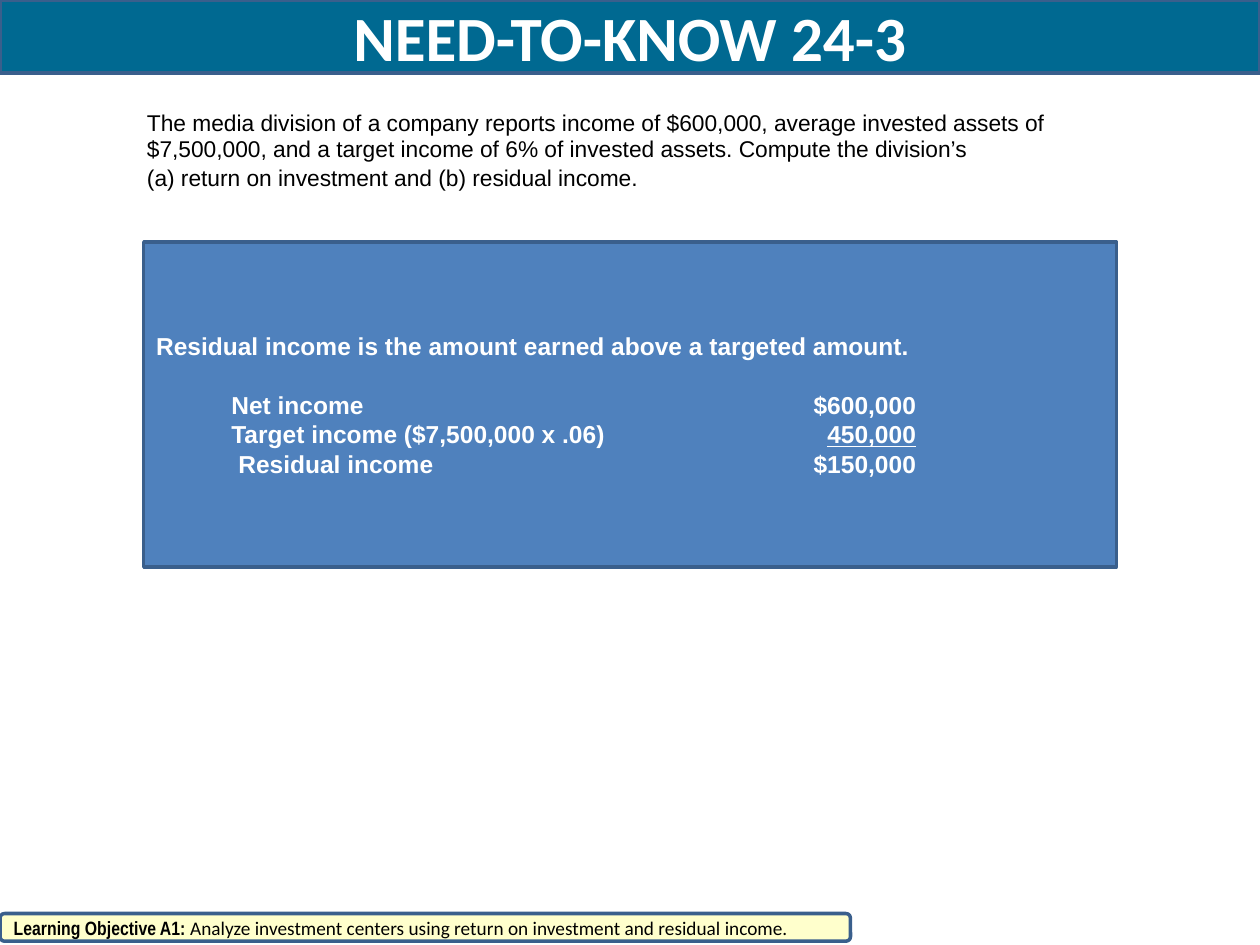
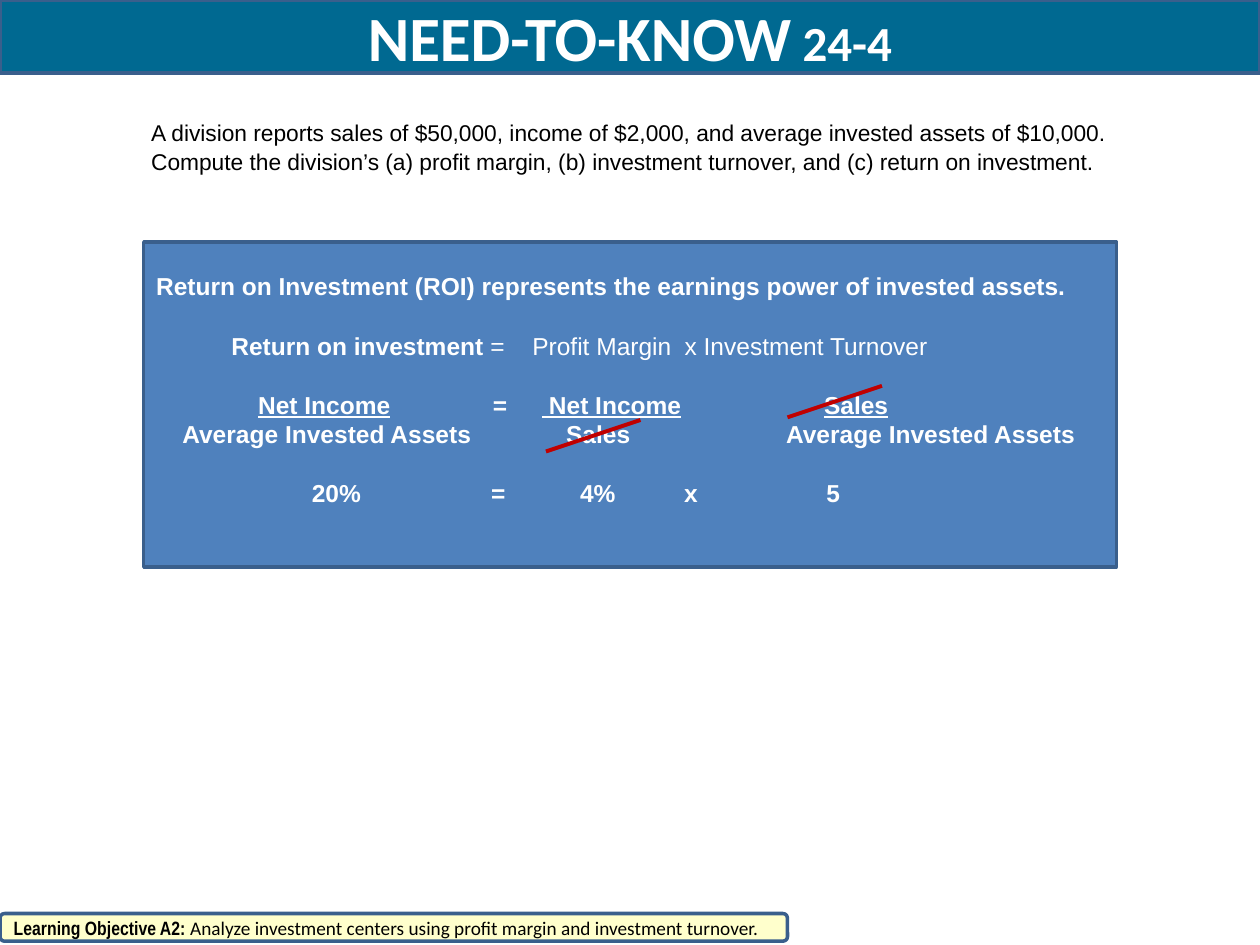
import dataclasses
import typing

import pptx
import pptx.dml.color
import pptx.enum.shapes
import pptx.enum.text
import pptx.oxml
import pptx.oxml.ns
import pptx.util

Pt = pptx.util.Pt
Shape = pptx.enum.shapes.MSO_SHAPE
Align = pptx.enum.text.PP_ALIGN
Anchor = pptx.enum.text.MSO_ANCHOR
Fit = pptx.enum.text.MSO_AUTO_SIZE


@dataclasses.dataclass(frozen=True)
class Theme:
    band: str = "006991"
    panel: str = "4F81BD"
    edge: str = "3A5F8C"
    cream: str = "FFFFCC"
    strike: str = "C00000"
    white: str = "FFFFFF"
    black: str = "000000"
    body: str = "Arial"
    head: str = "Calibri"
    narrow: str = "Arial Narrow"
    title: float = 36
    number: float = 28
    work: float = 14
    prompt: float = 13
    foot: float = 11
    rule: float = 2
    slash: float = 2.25


THEME = Theme()


@dataclasses.dataclass(frozen=True)
class Bit:
    text: str
    tab: typing.Optional[float] = None
    side: str = "l"
    bold: typing.Optional[bool] = None
    under: bool = False
    font: typing.Optional[str] = None
    size: typing.Optional[float] = None


class Row(typing.NamedTuple):
    bits: tuple[Bit, ...]
    gap: float = 0


class Box(typing.NamedTuple):
    left: float
    top: float
    width: float
    height: float


class Prompt(typing.NamedTuple):
    text: str
    box: Box


@dataclasses.dataclass(frozen=True)
class Page:
    title: tuple[Bit, ...]
    prompts: tuple[Prompt, ...]
    rows: tuple[Row, ...]
    goal: str
    aim: str
    foot: float
    pad: float = 3.6
    cuts: tuple[tuple[float, float], ...] = ()


BAND = Box(0, 0, 720, 41.76)
PANEL = Box(82.08, 138.24, 555.84, 185.76)
CUT_W, CUT_H = 54, 18
BLANK = 17
INDENT = 43
SUM = 434.3


def tint(code: str) -> pptx.dml.color.RGBColor:
    return pptx.dml.color.RGBColor.from_string(code)


def write(frame, rows: tuple[Row, ...], *, size: float, font: str, color: str,
          bold: bool = False, align=Align.LEFT) -> None:
    for i, row in enumerate(rows):
        para = frame.paragraphs[0] if i == 0 else frame.add_paragraph()
        para.alignment = align
        if row.gap:
            para.space_before = Pt(row.gap)
        stops = [bit for bit in row.bits if bit.tab is not None]
        if stops:
            props = para._p.get_or_add_pPr()
            tabs = pptx.oxml.ns.qn("a:tabLst")
            tabs = props.makeelement(tabs, {})
            props.append(tabs)
            for bit in stops:
                stop = {"pos": str(int(Pt(bit.tab))), "algn": bit.side}
                tabs.append(tabs.makeelement(pptx.oxml.ns.qn("a:tab"), stop))
        for bit in row.bits:
            parts = [(bit.text, bit.under)]
            if bit.tab is not None:
                parts.insert(0, ("\t", False))
            for text, under in parts:
                run = para.add_run()
                run.text = text
                run.font.size = Pt(bit.size or size)
                run.font.name = bit.font or font
                run.font.bold = bold if bit.bold is None else bit.bold
                run.font.underline = under
                run.font.color.rgb = tint(color)


def block(slide, kind, box: Box, fill: str):
    shape = slide.shapes.add_shape(kind, *map(Pt, box))
    shape.shadow.inherit = False
    shape.fill.solid()
    shape.fill.fore_color.rgb = tint(fill)
    shape.line.color.rgb = tint(THEME.edge)
    shape.line.width = Pt(THEME.rule)
    shape.text_frame.word_wrap = True
    shape.text_frame.vertical_anchor = Anchor.MIDDLE
    return shape.text_frame


def ask(slide, prompt: Prompt) -> None:
    frame = slide.shapes.add_textbox(*map(Pt, prompt.box)).text_frame
    frame.margin_left = frame.margin_right = 0
    frame.margin_top = frame.margin_bottom = 0
    frame.word_wrap = False
    frame.auto_size = Fit.SHAPE_TO_FIT_TEXT
    write(frame, (Row((Bit(prompt.text),)),), size=THEME.prompt,
          font=THEME.body, color=THEME.black)


def slash(slide, left: float, base: float) -> None:
    line = slide.shapes.add_connector(
        pptx.enum.shapes.MSO_CONNECTOR.STRAIGHT,
        Pt(left), Pt(base), Pt(left + CUT_W), Pt(base - CUT_H))
    line.line.color.rgb = tint(THEME.strike)
    line.line.width = Pt(THEME.slash)
    props = line._element.spPr
    props.append(props.makeelement(pptx.oxml.ns.qn("a:effectLst"), {}))


def draw(deck, page: Page) -> None:
    slide = deck.slides.add_slide(deck.slide_layouts[6])
    for prompt in page.prompts:
        ask(slide, prompt)
    panel = block(slide, Shape.RECTANGLE, PANEL, THEME.panel)
    panel.margin_bottom = Pt(page.pad)
    write(panel, page.rows, size=THEME.work, font=THEME.body,
          color=THEME.white, bold=True)
    for left, base in page.cuts:
        slash(slide, left, base)
    band = block(slide, Shape.RECTANGLE, BAND, THEME.band)
    write(band, (Row(page.title),), size=THEME.title, font=THEME.head,
          color=THEME.white, bold=True, align=Align.CENTER)
    foot = block(slide, Shape.ROUNDED_RECTANGLE,
                 Box(0, 522, page.foot, 15.84), THEME.cream)
    goal = Bit(f"Learning Objective {page.goal}: ", bold=True, font=THEME.narrow)
    write(foot, (Row((goal, Bit(page.aim))),), size=THEME.foot,
          font=THEME.head, color=THEME.black)


PAGES = (
    Page(
        title=(Bit("NEED-TO-KNOW 24-3"),),
        prompts=(
            Prompt("The media division of a company reports income of $600,000, "
                   "average invested assets of", Box(84, 62, 543.6, 18.7)),
            Prompt("$7,500,000, and a target income of 6% of invested assets. "
                   "Compute the division’s", Box(84, 77, 494.6, 15.8)),
            Prompt("(a) return on investment and (b) residual income.",
                   Box(84, 93.6, 284.4, 15.8)),
        ),
        rows=(
            Row((Bit("Residual income is the amount earned above a targeted amount."),)),
            Row((Bit("Net income", INDENT), Bit("$600,000", SUM, "r")), BLANK),
            Row((Bit("Target income ($7,500,000 x .06)", INDENT),
                 Bit("450,000", SUM, "r", under=True))),
            Row((Bit("Residual income", INDENT + 4), Bit("$150,000", SUM, "r"))),
        ),
        goal="A1",
        aim="Analyze investment centers using return on investment and residual income.",
        foot=486,
    ),
    Page(
        title=(Bit("NEED-TO-KNOW"), Bit(" 24-4", size=THEME.number)),
        prompts=(
            Prompt("A division reports sales of $50,000, income of $2,000, "
                   "and average invested assets of $10,000.",
                   Box(86.4, 67.7, 574.6, 19.4)),
            Prompt("Compute the division’s (a) profit margin, (b) investment "
                   "turnover, and (c) return on investment.",
                   Box(86.4, 84.2, 567.4, 19.4)),
        ),
        rows=(
            Row((Bit("Return on Investment (ROI) represents the earnings power "
                     "of invested assets."),)),
            Row((Bit("Return on investment", INDENT), Bit("=", 191, bold=False),
                 Bit("Profit Margin", 215, bold=False),
                 Bit("x Investment Turnover", 302, bold=False)), BLANK),
            Row((Bit("Net Income", 58.3, under=True), Bit("=", 192.5),
                 Bit(" Net Income", 220.6, under=True),
                 Bit("Sales", 381.7, under=True)), BLANK),
            Row((Bit("Average Invested Assets", 15), Bit("Sales", 234.3),
                 Bit("Average Invested Assets", 360))),
            Row((Bit("20%", 89), Bit("=", 191.4), Bit("4%", 242.3),
                 Bit("x", 301.7), Bit("5", 383)), BLANK),
        ),
        goal="A2",
        aim="Analyze investment centers using profit margin and investment turnover.",
        foot=450,
        pad=3.6 + BLANK,
        cuts=((312, 258), (450, 238.5)),
    ),
)


def main() -> None:
    deck = pptx.Presentation()
    deck.slide_width, deck.slide_height = Pt(720), Pt(540)
    for page in PAGES:
        draw(deck, page)
    deck.save("out.pptx")


if __name__ == "__main__":
    main()
